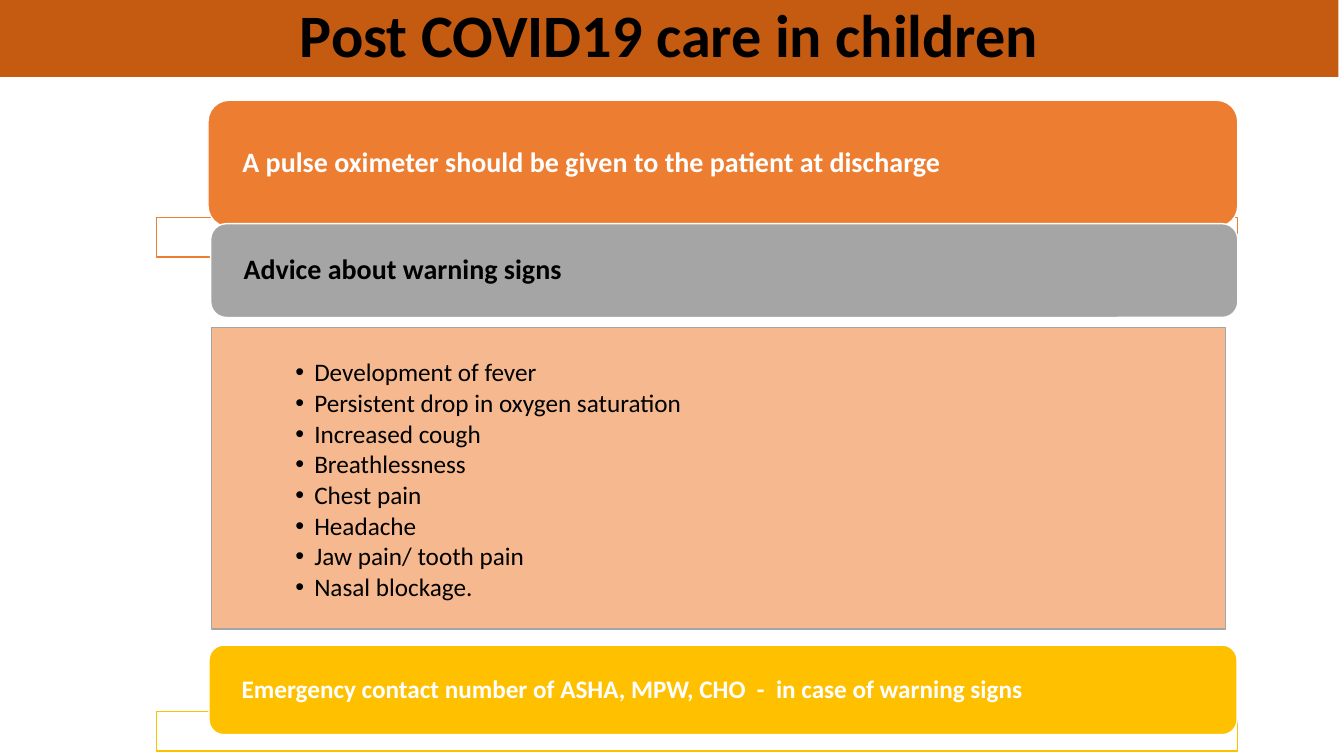
from lxml.etree import SubElement
from pptx import Presentation
from pptx.dml.color import RGBColor
from pptx.enum.shapes import MSO_SHAPE as Shape
from pptx.enum.text import MSO_ANCHOR as Anchor, PP_ALIGN as Align
from pptx.oxml.ns import qn
from pptx.util import Pt

FONT = "Calibri"
BLACK = RGBColor(0x00, 0x00, 0x00)
WHITE = RGBColor(0xFF, 0xFF, 0xFF)
RUST = RGBColor(0xC5, 0x5A, 0x11)
ORANGE = RGBColor(0xED, 0x7D, 0x31)
PEACH = RGBColor(0xF4, 0xB1, 0x83)
GREY = RGBColor(0xA5, 0xA5, 0xA5)
GOLD = RGBColor(0xFF, 0xC0, 0x00)

WARNING_SIGNS = [
    "Development of fever",
    "Persistent drop in oxygen saturation",
    "Increased cough",
    "Breathlessness",
    "Chest pain",
    "Headache",
    "Jaw pain/ tooth pain",
    "Nasal blockage.",
]


def set_margins(frame, left, top, right, bottom):
    """Set the text insets of a frame in points."""
    frame.margin_left, frame.margin_top = Pt(left), Pt(top)
    frame.margin_right, frame.margin_bottom = Pt(right), Pt(bottom)


def write(paragraph, text, size, color, bold=False, align=Align.LEFT):
    """Add one formatted run to a paragraph."""
    paragraph.alignment = align
    paragraph.line_spacing = 0.9
    run = paragraph.add_run()
    run.text = text
    run.font.name = FONT
    run.font.size = Pt(size)
    run.font.bold = bold
    run.font.color.rgb = color


def add_box(slide, kind, box, fill, line, opacity=100):
    """Add a filled and outlined shape in the given box."""
    shape = slide.shapes.add_shape(kind, *map(Pt, box))
    shape.shadow.inherit = False
    shape.fill.solid()
    shape.fill.fore_color.rgb = fill
    shape.line.color.rgb = line
    shape.line.width = Pt(1)
    if opacity < 100:
        color = shape.fill._xPr.find(qn("a:solidFill"))[0]
        SubElement(color, qn("a:alpha"), val=str(opacity * 1000))
    return shape


def add_title(slide, box, text):
    """Turn the title placeholder into a coloured banner."""
    title = slide.shapes.title
    title.left, title.top, title.width, title.height = map(Pt, box)
    title.fill.solid()
    title.fill.fore_color.rgb = RUST
    frame = title.text_frame
    frame.vertical_anchor = Anchor.MIDDLE
    set_margins(frame, 7.2, 3.6, 7.2, 3.6)
    write(frame.paragraphs[0], text, 43, BLACK, True, Align.CENTER)


def add_frame(slide, top, color):
    """Add the thin outlined strip that sits behind a heading."""
    add_box(slide, Shape.RECTANGLE, (111.6, top, 772.6, 28.1), WHITE, color, 90)


def add_heading(slide, box, text, fill, color, size):
    """Add a rounded heading bar with bold text."""
    bar = add_box(slide, Shape.ROUNDED_RECTANGLE, box, fill, WHITE)
    frame = bar.text_frame
    frame.word_wrap = True
    frame.vertical_anchor = Anchor.MIDDLE
    set_margins(frame, 20.2, 0, 20.2, 0)
    write(frame.paragraphs[0], text, size, color, True)


def add_bullet_panel(slide, box, items):
    """Add a panel with a bulleted list."""
    panel = add_box(slide, Shape.RECTANGLE, box, PEACH, GREY, 90)
    frame = panel.text_frame
    frame.word_wrap = True
    frame.vertical_anchor = Anchor.TOP
    set_margins(frame, 59.8, 23, 59.8, 10)
    for index, item in enumerate(items):
        paragraph = frame.add_paragraph() if index else frame.paragraphs[0]
        paragraph.level = 1
        paragraph.space_after = Pt(2.5)
        properties = paragraph._p.get_or_add_pPr()
        properties.set("marL", str(Pt(13.5)))
        properties.set("indent", str(-Pt(13.5)))
        SubElement(properties, qn("a:buFont"), typeface="Arial")
        SubElement(properties, qn("a:buChar"), char="•")
        write(paragraph, item, 18, BLACK)


def main():
    """Build the slide and save it."""
    presentation = Presentation()
    presentation.slide_width, presentation.slide_height = Pt(960), Pt(540)
    slide = presentation.slides.add_slide(presentation.slide_layouts[5])
    add_title(slide, (0, 0, 956, 55), "Post COVID19 care in children")
    add_frame(slide, 155.5, ORANGE)
    add_heading(slide, (148.6, 71.6, 735.6, 90.5),
                "A pulse oximeter should be given to the patient at discharge",
                ORANGE, WHITE, 20)
    add_bullet_panel(slide, (151.2, 234, 724.3, 215.3), WARNING_SIGNS)
    add_heading(slide, (150.5, 159.8, 733.7, 67),
                "Advice about warning signs", GREY, BLACK, 20)
    add_frame(slide, 508.3, GOLD)
    add_heading(slide, (149.3, 460.8, 734.4, 64),
                "Emergency contact number of ASHA, MPW, CHO  -  in case of warning signs",
                GOLD, WHITE, 18)
    presentation.save("out.pptx")


if __name__ == "__main__":
    main()
